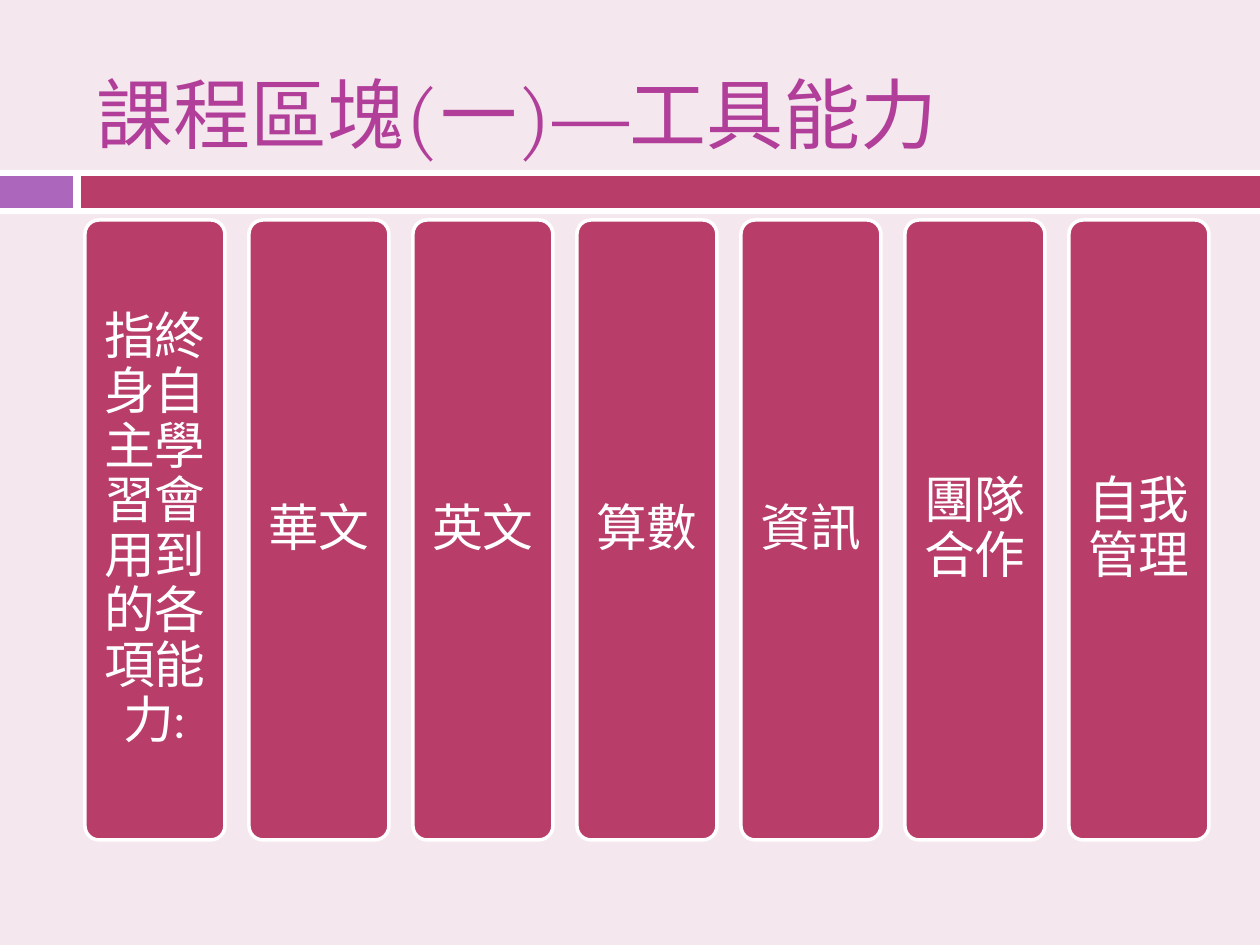
from pptx import Presentation
from pptx.dml.color import RGBColor
from pptx.enum.shapes import MSO_SHAPE
from pptx.enum.text import MSO_ANCHOR, MSO_AUTO_SIZE, PP_ALIGN
from pptx.util import Emu, Pt

RECT, ROUND = MSO_SHAPE.RECTANGLE, MSO_SHAPE.ROUNDED_RECTANGLE
MIDDLE, NO_FIT = MSO_ANCHOR.MIDDLE, MSO_AUTO_SIZE.NONE
LEFT, CENTER = PP_ALIGN.LEFT, PP_ALIGN.CENTER
PX = 914400 // 126
FONT = "TeX Gyre Pagella"
COLORS = {
    "bg": "F4E7ED",
    "white": "FFFFFF",
    "purple": "AC66BB",
    "rose": "B83D68",
    "title": "B13F9A",
}
SKILLS = [
    "指終身自主學習會用到的各項能力:",
    "華文",
    "英文",
    "算數",
    "資訊",
    "團隊合作",
    "自我管理",
]


def px(*values):
    return [Emu(v * PX) for v in values]


def color(name):
    return RGBColor.from_string(COLORS[name])


class Deck:
    """Holds the style and the current slide."""

    def __init__(self, prs):
        self.slide = prs.slides.add_slide(prs.slide_layouts[5])
        fill = self.slide.background.fill
        fill.solid()
        fill.fore_color.rgb = color("bg")

    def set_text(self, sp, text, size, ink, align):
        tf = sp.text_frame
        tf.text = text
        tf.word_wrap = True
        tf.auto_size = NO_FIT
        tf.vertical_anchor = MIDDLE
        p = tf.paragraphs[0]
        p.alignment = align
        p.font.name = FONT
        p.font.size = Pt(size)
        p.font.color.rgb = color(ink)
        return tf, p

    def title(self, text, *box):
        sp = self.slide.shapes.title
        sp.left, sp.top, sp.width, sp.height = px(*box)
        self.set_text(sp, text, 44, "title", LEFT)

    def block(self, fill, *box, kind=RECT):
        sp = self.slide.shapes.add_shape(kind, *px(*box))
        sp.shadow.inherit = False
        sp.fill.solid()
        sp.fill.fore_color.rgb = color(fill)
        sp.line.fill.background()
        return sp

    def card(self, text, *box):
        sp = self.block("rose", *box, kind=ROUND)
        sp.adjustments[0] = 0.1
        sp.line.color.rgb = color("white")
        sp.line.width = Pt(2)
        tf, p = self.set_text(sp, text, 29, "white", CENTER)
        tf.margin_left, tf.margin_right = px(11, 11)
        p.line_spacing = 0.9


def main():
    prs = Presentation()
    prs.slide_width, prs.slide_height = px(1260, 945)
    deck = Deck(prs)
    deck.block("white", 0, 170, 1260, 44)
    deck.block("purple", 0, 176, 73, 32)
    deck.block("rose", 81, 176, 1179, 32)
    deck.title("課程區塊(一)—工具能力", 84, 45, 1124, 136)
    for i, skill in enumerate(SKILLS):
        deck.card(skill, 85 + 164 * i, 220, 140, 620)
    prs.save("out.pptx")


if __name__ == "__main__":
    main()
